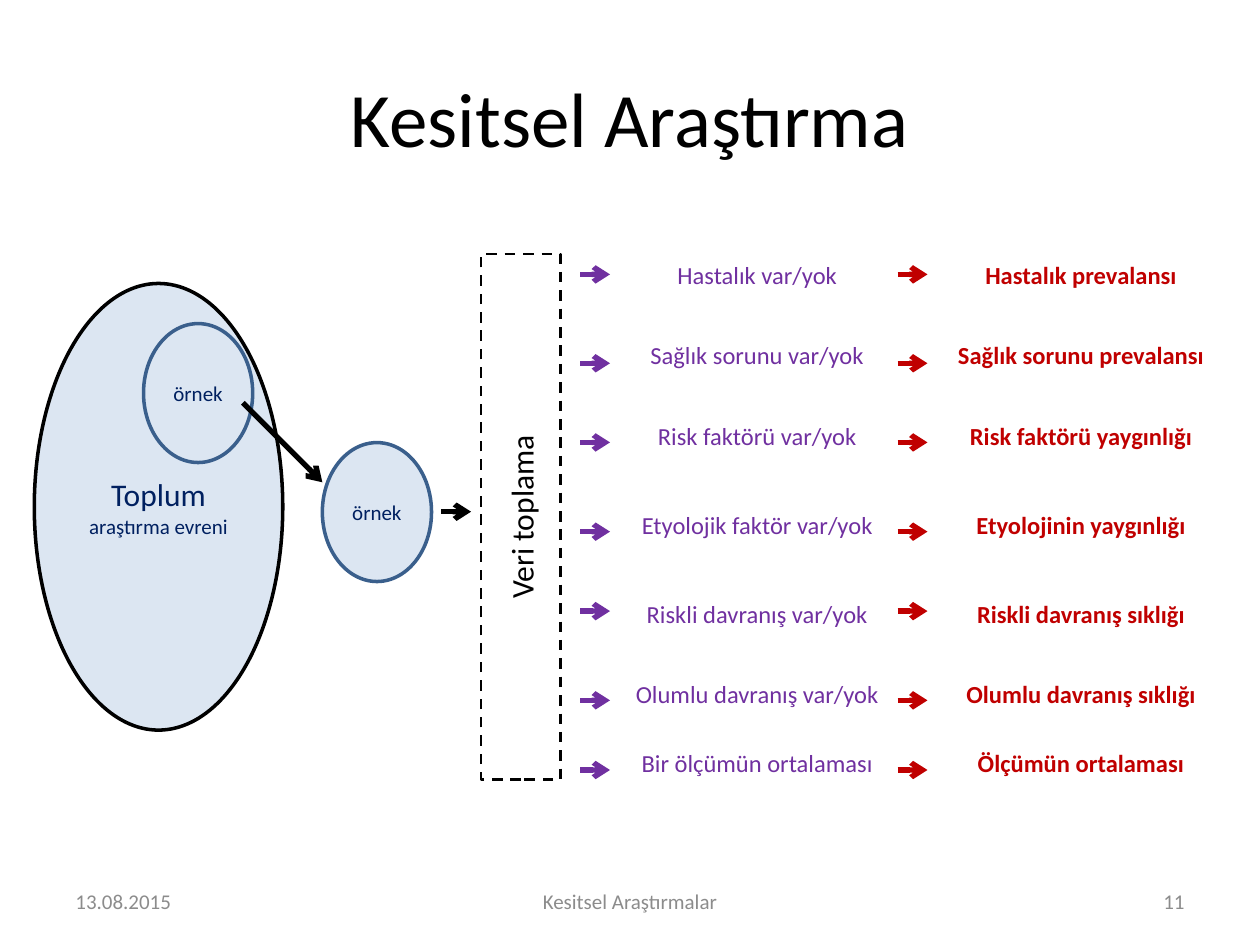
from pptx import Presentation
from pptx.dml.color import RGBColor
from pptx.enum.dml import MSO_LINE
from pptx.enum.shapes import MSO_CONNECTOR, MSO_SHAPE
from pptx.enum.text import MSO_ANCHOR, MSO_AUTO_SIZE, PP_ALIGN
from pptx.oxml.ns import qn
from pptx.util import Pt
from lxml import etree

OVAL, RECT = MSO_SHAPE.OVAL, MSO_SHAPE.RECTANGLE
LEFT, CENTER, RIGHT = PP_ALIGN.LEFT, PP_ALIGN.CENTER, PP_ALIGN.RIGHT
TOP, MIDDLE = MSO_ANCHOR.TOP, MSO_ANCHOR.MIDDLE
BLACK = RGBColor(0x00, 0x00, 0x00)
GRAY = RGBColor(0x8C, 0x8C, 0x8C)
NAVY = RGBColor(0x00, 0x20, 0x60)
STEEL = RGBColor(0x3A, 0x5F, 0x8C)
PALE = RGBColor(0xDC, 0xE6, 0xF2)
PURPLE = RGBColor(0x70, 0x30, 0xA0)
RED = RGBColor(0xC0, 0x00, 0x00)
FONT = "Calibri"

# Content: text, box (left, top, width, height), alignment, size, colour
HEADINGS = [
    ("Kesitsel Araştırma", (36, 21.6, 648, 90), CENTER, 44, BLACK),
    ("13.08.2015", (36, 500.4, 168, 28.8), LEFT, 12, GRAY),
    ("Kesitsel Araştırmalar", (246, 500.4, 228, 28.8), CENTER, 12, GRAY),
    ("11", (516, 500.4, 168, 28.8), RIGHT, 12, GRAY),
]
# Runs (text, size), shape, box, fill, line colour, line width, text colour
SHAPES = [
    ([("Toplum ", 18), ("araştırma evreni", 12)], OVAL,
     (19.6, 162, 142, 255.2), PALE, BLACK, 2, NAVY),
    ([("örnek", 12)], OVAL, (82, 184.9, 62.4, 79.4), PALE, STEEL, 2, NAVY),
    ([("örnek", 12)], OVAL, (184.2, 252.9, 62.4, 79.4), PALE, STEEL, 2, NAVY),
    ([("Veri toplama", 18)], RECT, (275, 145.2, 45.4, 300.4), None, BLACK, 1.5, BLACK),
]
# Finding, measure, text top, arrow height
ROWS = [
    ("Hastalık var/yok", "Hastalık prevalansı", 145.2, 156.8),
    ("Sağlık sorunu var/yok", "Sağlık sorunu prevalansı", 191, 207.6),
    ("Risk faktörü var/yok", "Risk faktörü yaygınlığı", 237, 252.8),
    ("Etyolojik faktör var/yok", "Etyolojinin yaygınlığı", 288, 303.8),
    ("Riskli davranış var/yok", "Riskli davranış sıklığı", 339, 349.2),
    ("Olumlu davranış var/yok", "Olumlu davranış sıklığı", 384.4, 400.2),
    ("Bir ölçümün ortalaması", "Ölçümün ortalaması", 424, 440),
]
# Arrow left, text left, text width, colour, bold
COLUMNS = [(331.6, 354.2, 157, PURPLE, False), (513, 535.6, 164.2, RED, True)]
ARROW_LENGTH, ROW_HEIGHT = 17, 24.4
SAMPLE_ARROWS = [(138.8, 230.2, 184.2, 275.6), (252.2, 292.4, 269.2, 292.4)]

prs = Presentation()
prs.slide_width, prs.slide_height = Pt(720), Pt(540)
s = prs.slides.add_slide(prs.slide_layouts[6])


def write(sp, runs, color, align=CENTER, anchor=MIDDLE, bold=False):
    tf = sp.text_frame
    tf.word_wrap = True
    tf.vertical_anchor = anchor
    p = tf.paragraphs[0]
    p.alignment = align
    for text, size in runs:
        r = p.add_run()
        r.text = text
        r.font.color.rgb = color
        for name, value in {"name": FONT, "size": Pt(size), "bold": bold}.items():
            setattr(r.font, name, value)
    return tf


def add_text(box, *args, **kwargs):
    return write(s.shapes.add_textbox(*map(Pt, box)), *args, **kwargs)


def add_arrow(ends, color):
    cx = s.shapes.add_connector(MSO_CONNECTOR.STRAIGHT, *map(Pt, ends))
    cx.line.color.rgb = color
    cx.line.width = Pt(3)
    etree.SubElement(cx.line._get_or_add_ln(), qn("a:tailEnd"), type="arrow")
    etree.SubElement(cx._element.spPr, qn("a:effectLst"))


# Title and footer
for text, box, align, size, color in HEADINGS:
    add_text(box, [(text, size)], color, align)

# Population, samples and data collection
for runs, kind, box, fill, line, width, color in SHAPES:
    sp = s.shapes.add_shape(kind, *map(Pt, box))
    sp.shadow.inherit = False
    sp.line.color.rgb = line
    sp.line.width = Pt(width)
    if fill is None:
        sp.fill.background()
    else:
        sp.fill.solid()
        sp.fill.fore_color.rgb = fill
    tf = write(sp, runs, color)
    if kind == RECT:
        sp.line.dash_style = MSO_LINE.DASH
        tf._txBody.bodyPr.set("vert", "vert270")

# Findings and the measures they lead to
for *texts, top, arrow_y in ROWS:
    for text, (arrow_x, left, width, color, bold) in zip(texts, COLUMNS):
        tf = add_text((left, top, width, ROW_HEIGHT), [(text, 14)], color,
                      anchor=TOP, bold=bold)
        tf.auto_size = MSO_AUTO_SIZE.SHAPE_TO_FIT_TEXT
        add_arrow((arrow_x, arrow_y, arrow_x + ARROW_LENGTH, arrow_y), color)

# Path of the sample
for ends in SAMPLE_ARROWS:
    add_arrow(ends, BLACK)

prs.save("out.pptx")
